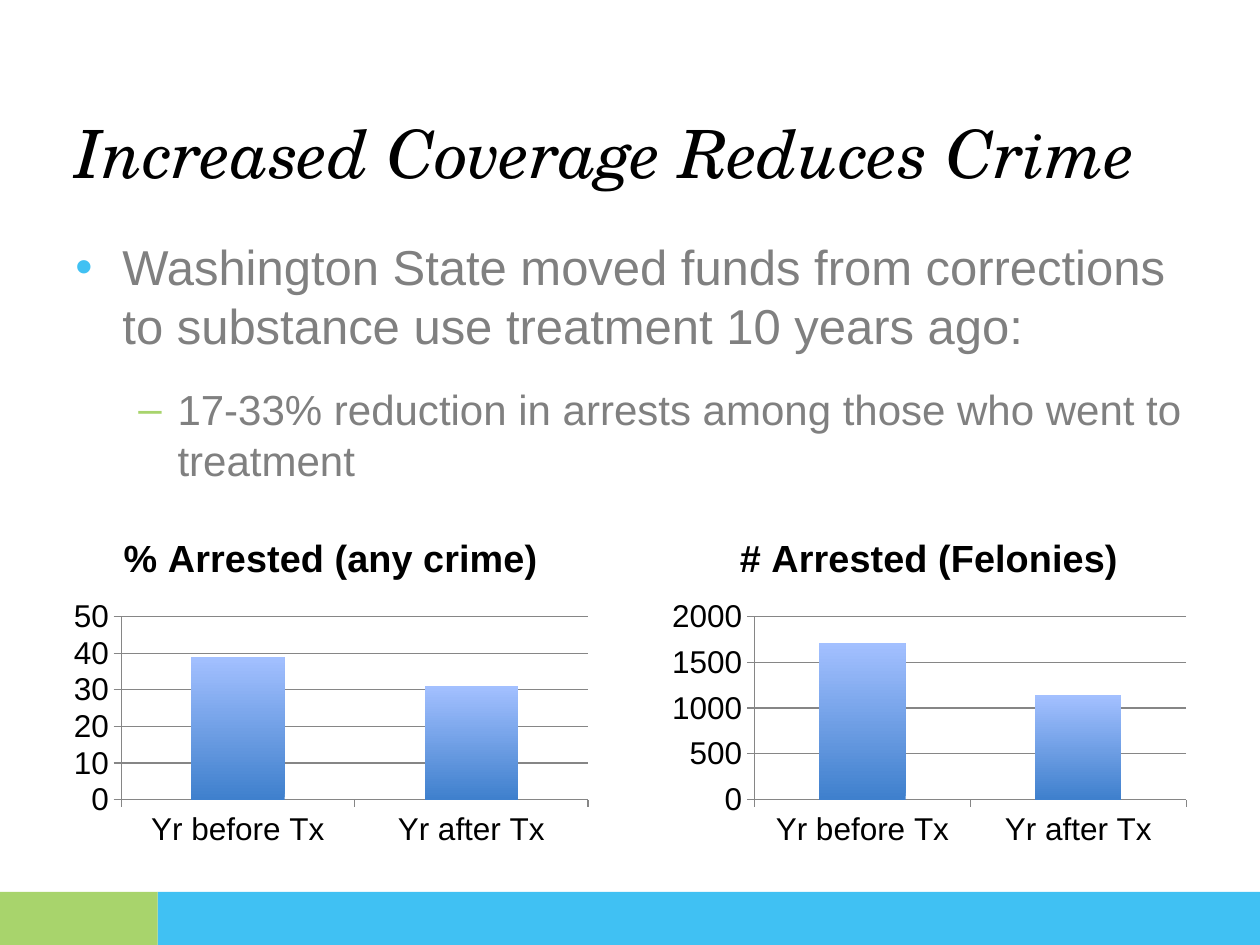
from dataclasses import dataclass

import lxml.etree
import pptx
import pptx.chart.data
import pptx.dml.color
import pptx.enum.chart
import pptx.enum.shapes
import pptx.enum.text
import pptx.oxml.ns
import pptx.util
from pptx.util import Cm, Pt


def rgb(code: str) -> pptx.dml.color.RGBColor:
    return pptx.dml.color.RGBColor.from_string(code)


@dataclass(frozen=True)
class Theme:
    blue: str = "40C1F3"
    green: str = "A8D46C"
    black: str = "000000"
    gray: str = "808080"
    axis: str = "868686"
    bar_bottom: str = "3F80CD"
    bar_top: str = "A3C0FF"
    title_font: str = "TeX Gyre Schola"
    body_font: str = "Arial"
    title_size: float = 38
    chart_title_size: float = 21.6
    chart_size: float = 18


@dataclass(frozen=True)
class Band:
    left: float
    width: float
    color: str


@dataclass(frozen=True)
class Bullet:
    text: str
    mark: str
    color: str
    size: float
    margin: float
    hanging: float
    after: float


@dataclass(frozen=True)
class ArrestChart:
    title: str
    left: float
    values: tuple[int, int]
    maximum: int
    step: int


THEME = Theme()
MARGIN, CONTENT_WIDTH = 1.27, 22.86
BAND_TOP, BAND_HEIGHT = 17.98, 1.07
CHART_TOP, CHART_WIDTH, CHART_HEIGHT = 10.36, 10.8, 6.86
CATEGORIES = ("Yr before Tx", "Yr after Tx")

BANDS = (
    Band(3.18, 22.22, THEME.blue),
    Band(0, 3.18, THEME.green),
)
BULLETS = (
    Bullet("Washington State moved funds from corrections to substance use "
           "treatment 10 years ago:", "•", THEME.blue, 28, 0.95, 0.95, 12),
    Bullet("17-33% reduction in arrests among those who went to treatment",
           "–", THEME.green, 24, 2.06, 0.79, 0),
)
CHARTS = (
    ArrestChart("% Arrested (any crime)", MARGIN, (39, 31), 50, 10),
    ArrestChart("# Arrested (Felonies)", MARGIN + CONTENT_WIDTH - CHART_WIDTH,
                (1710, 1140), 2000, 500),
)


def style_font(font, name: str, size: float, color: str) -> None:
    font.name = name
    font.size = Pt(size)
    font.color.rgb = rgb(color)


def add_band(page, band: Band) -> None:
    box = page.shapes.add_shape(
        pptx.enum.shapes.MSO_SHAPE.RECTANGLE,
        Cm(band.left), Cm(BAND_TOP), Cm(band.width), Cm(BAND_HEIGHT))
    box.shadow.inherit = False
    box.fill.solid()
    box.fill.fore_color.rgb = rgb(band.color)
    box.line.fill.background()


def add_text_frame(page, top: float, height: float):
    box = page.shapes.add_textbox(
        Cm(MARGIN), Cm(top), Cm(CONTENT_WIDTH), Cm(height))
    box.text_frame.word_wrap = True
    return box.text_frame


def add_title(page, text: str) -> None:
    frame = add_text_frame(page, 1.47, 3.18)
    frame.vertical_anchor = pptx.enum.text.MSO_ANCHOR.MIDDLE
    para = frame.paragraphs[0]
    para.text = text
    style_font(para.font, THEME.title_font, THEME.title_size, THEME.black)
    para.font.italic = True


def set_bullet(para, bullet: Bullet) -> None:
    """Give the paragraph a coloured mark and a hanging indent."""
    qn = pptx.oxml.ns.qn
    properties = para._p.get_or_add_pPr()
    properties.set("marL", str(Cm(bullet.margin)))
    properties.set("indent", str(-Cm(bullet.hanging)))
    color = lxml.etree.SubElement(properties, qn("a:buClr"))
    lxml.etree.SubElement(color, qn("a:srgbClr"), val=bullet.color)
    lxml.etree.SubElement(properties, qn("a:buFont"), typeface=THEME.body_font)
    lxml.etree.SubElement(properties, qn("a:buChar"), char=bullet.mark)


def add_bullets(page, bullets: tuple[Bullet, ...]) -> None:
    frame = add_text_frame(page, 4.65, 12.57)
    for index, bullet in enumerate(bullets):
        para = frame.add_paragraph() if index else frame.paragraphs[0]
        para.text = bullet.text
        para.level = index
        para.space_before = Pt(bullet.size * 0.2)
        para.space_after = Pt(bullet.after)
        set_bullet(para, bullet)
        style_font(para.font, THEME.body_font, bullet.size, THEME.gray)


def add_arrest_chart(page, spec: ArrestChart) -> None:
    data = pptx.chart.data.CategoryChartData()
    data.categories = CATEGORIES
    data.add_series(spec.title, spec.values)
    chart = page.shapes.add_chart(
        pptx.enum.chart.XL_CHART_TYPE.COLUMN_CLUSTERED,
        Cm(spec.left), Cm(CHART_TOP), Cm(CHART_WIDTH), Cm(CHART_HEIGHT),
        data).chart
    style_font(chart.font, THEME.body_font, THEME.chart_size, THEME.black)
    chart.has_legend = False
    chart.has_title = True
    para = chart.chart_title.text_frame.paragraphs[0]
    para.text = spec.title
    style_font(para.font, THEME.body_font, THEME.chart_title_size, THEME.black)
    para.font.bold = True

    chart.value_axis.minimum_scale = 0
    chart.value_axis.maximum_scale = spec.maximum
    chart.value_axis.major_unit = spec.step
    chart.value_axis.has_major_gridlines = True
    gridlines = chart.value_axis.major_gridlines
    for part in (chart.category_axis, chart.value_axis, gridlines):
        part.format.line.color.rgb = rgb(THEME.axis)
        part.format.line.width = Pt(0.75)
    for axis in (chart.category_axis, chart.value_axis):
        axis.major_tick_mark = pptx.enum.chart.XL_TICK_MARK.OUTSIDE

    plot = chart.plots[0]
    plot.vary_by_categories = False
    plot.gap_width = 150
    fill = plot.series[0].format.fill
    fill.gradient()
    fill.gradient_angle = 90
    for stop, color in zip(fill.gradient_stops,
                           (THEME.bar_bottom, THEME.bar_top)):
        stop.color.rgb = rgb(color)


def main() -> None:
    deck = pptx.Presentation()
    deck.slide_width, deck.slide_height = Cm(25.4), Cm(19.05)
    page = deck.slides.add_slide(deck.slide_layouts[6])
    for band in BANDS:
        add_band(page, band)
    add_title(page, "Increased Coverage Reduces Crime")
    add_bullets(page, BULLETS)
    for spec in CHARTS:
        add_arrest_chart(page, spec)
    deck.save("out.pptx")


if __name__ == "__main__":
    main()
